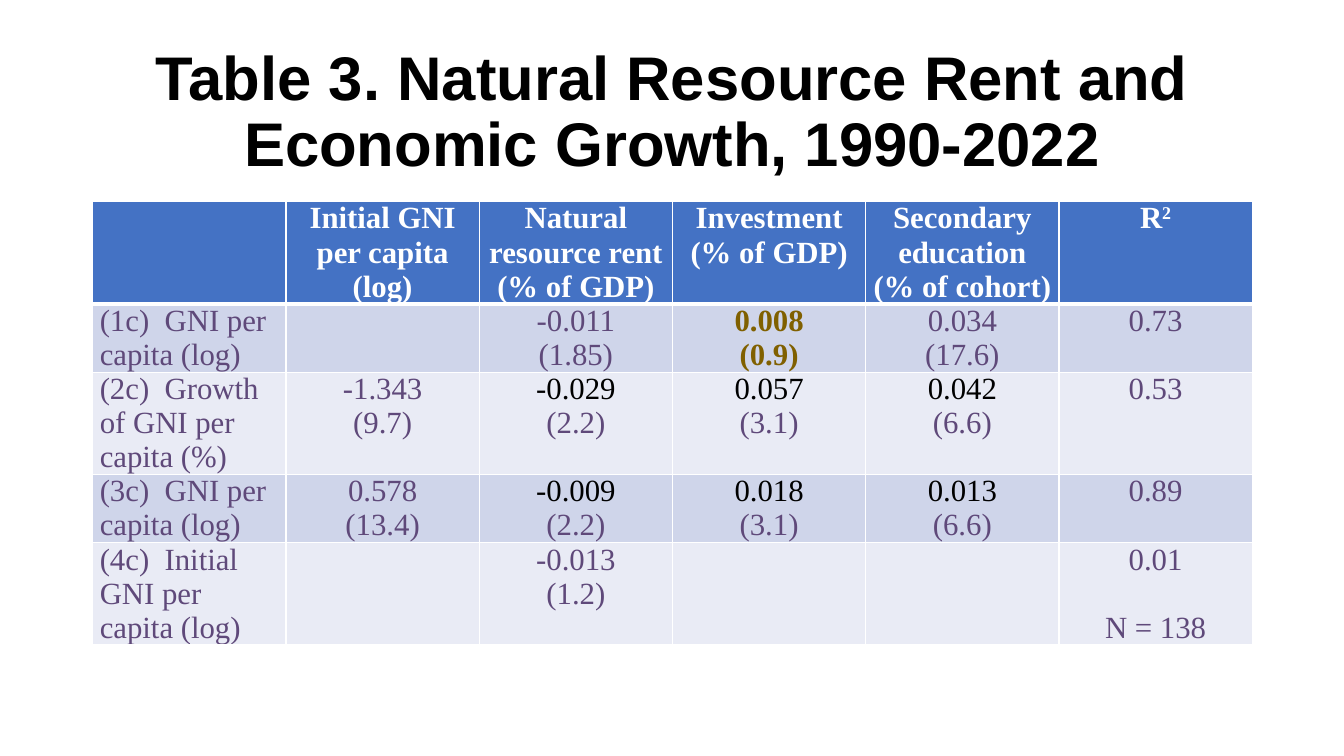
from dataclasses import dataclass

import pptx
import pptx.dml.color
import pptx.enum.text
import pptx.oxml
import pptx.oxml.ns
import pptx.util
from pptx.util import Inches


@dataclass(frozen=True)
class Theme:
    title_font: str = "Arial"
    table_font: str = "Times New Roman"
    title_size: int = 44
    table_size: int = 22
    black: str = "000000"
    white: str = "FFFFFF"
    purple: str = "5F497A"
    gold: str = "806000"
    header_fill: str = "4472C4"
    band_fills: tuple = ("CFD5EA", "E9EBF5")


THEME = Theme()
CENTER = pptx.enum.text.PP_ALIGN.CENTER

# Each line break inside a cell starts a new paragraph
RESULTS = [
    ["", "Initial GNI per capita (log)", "Natural resource rent (% of GDP)",
     "Investment (% of GDP)", "Secondary education\n(% of cohort)", "R"],
    ["(1c)  GNI per capita (log)", "", "-0.011\n(1.85)", "0.008\n(0.9)",
     "0.034\n(17.6)", "0.73"],
    ["(2c)  Growth of GNI per capita (%)", "-1.343\n(9.7)", "-0.029\n(2.2)",
     "0.057\n(3.1)", "0.042\n(6.6)", "0.53"],
    ["(3c)  GNI per capita (log)", "0.578\n(13.4)", "-0.009\n(2.2)",
     "0.018\n(3.1)", "0.013\n(6.6)", "0.89"],
    ["(4c)  Initial GNI per capita (log)", "", "-0.013\n(1.2)", "", "",
     "0.01\nN = 138"],
]
LINES_PER_ROW = [3, 2, 3, 2, 3]
LINE_HEIGHT = 0.338
GOLD_CELL = (1, 3)
BLACK_COEFFICIENTS = {(row, column) for row in (2, 3) for column in (2, 3, 4)}


def rgb(color):
    return pptx.dml.color.RGBColor.from_string(color)


def style_font(font, name, size, color, bold):
    font.name = name
    font.size = pptx.util.Pt(size)
    font.color.rgb = rgb(color)
    font.bold = bold


def add_title(slide, text):
    title = slide.shapes.title
    title.left, title.top = Inches(0.92), Inches(0.4)
    title.width, title.height = Inches(11.5), Inches(1.45)
    frame = title.text_frame
    frame.text = text
    frame.auto_size = pptx.enum.text.MSO_AUTO_SIZE.NONE
    frame.vertical_anchor = pptx.enum.text.MSO_ANCHOR.MIDDLE
    heading = frame.paragraphs[0]
    heading.alignment = CENTER
    heading.line_spacing = 0.9
    style_font(heading.runs[0].font, THEME.title_font, THEME.title_size,
               THEME.black, True)


def set_borders(cell, row):
    """White rules, with a heavier one below the header."""
    properties = cell._tc.get_or_add_tcPr()
    for side in "LRTB":
        heavy = (row, side) in {(0, "B"), (1, "T")}
        width = pptx.util.Pt(3 if heavy else 1)
        properties.append(pptx.oxml.parse_xml(
            f'<a:ln{side} {pptx.oxml.ns.nsdecls("a")} w="{width}"><a:solidFill>'
            f'<a:srgbClr val="{THEME.white}"/></a:solidFill></a:ln{side}>'))


def text_style(row, column, line):
    """Colour and weight of one line in a cell."""
    if row == 0:
        return THEME.white, True
    if (row, column) == GOLD_CELL:
        return THEME.gold, True
    if (row, column) in BLACK_COEFFICIENTS and line == 0:
        return THEME.black, False
    return THEME.purple, False


def fill_cell(cell, text, row, column):
    set_borders(cell, row)
    cell.fill.solid()
    cell.fill.fore_color.rgb = rgb(
        THEME.band_fills[(row - 1) % 2] if row else THEME.header_fill)
    cell.margin_left = cell.margin_right = Inches(0.07)
    cell.margin_top = cell.margin_bottom = 0
    cell.text_frame.text = text
    for line, paragraph in enumerate(cell.text_frame.paragraphs):
        if column:
            paragraph.alignment = CENTER
        for run in paragraph.runs:
            style_font(run.font, THEME.table_font, THEME.table_size,
                       *text_style(row, column, line))


def add_superscript(paragraph, text):
    run = paragraph.add_run()
    run.text = text
    style_font(run.font, THEME.table_font, THEME.table_size, THEME.white, True)
    run.font._element.set("baseline", "30000")


def add_results_table(slide):
    heights = [Inches(lines * LINE_HEIGHT) for lines in LINES_PER_ROW]
    results = slide.shapes.add_table(
        len(RESULTS), len(RESULTS[0]), Inches(0.92), Inches(2),
        Inches(11.5), sum(heights)).table
    for row, texts in enumerate(RESULTS):
        results.rows[row].height = heights[row]
        for column, text in enumerate(texts):
            fill_cell(results.cell(row, column), text, row, column)

    # Exponent of R², and the sample size set one line lower
    add_superscript(results.cell(0, 5).text_frame.paragraphs[0], "2")
    sample_size = results.cell(4, 5).text_frame.paragraphs[1]
    sample_size.space_before = Inches(LINE_HEIGHT)


def main():
    deck = pptx.Presentation()
    deck.slide_width, deck.slide_height = Inches(13.33), Inches(7.5)
    slide = deck.slides.add_slide(deck.slide_layouts.get_by_name("Title Only"))
    add_title(slide, "Table 3. Natural Resource Rent and Economic Growth, 1990-2022")
    add_results_table(slide)
    deck.save("out.pptx")


if __name__ == "__main__":
    main()
